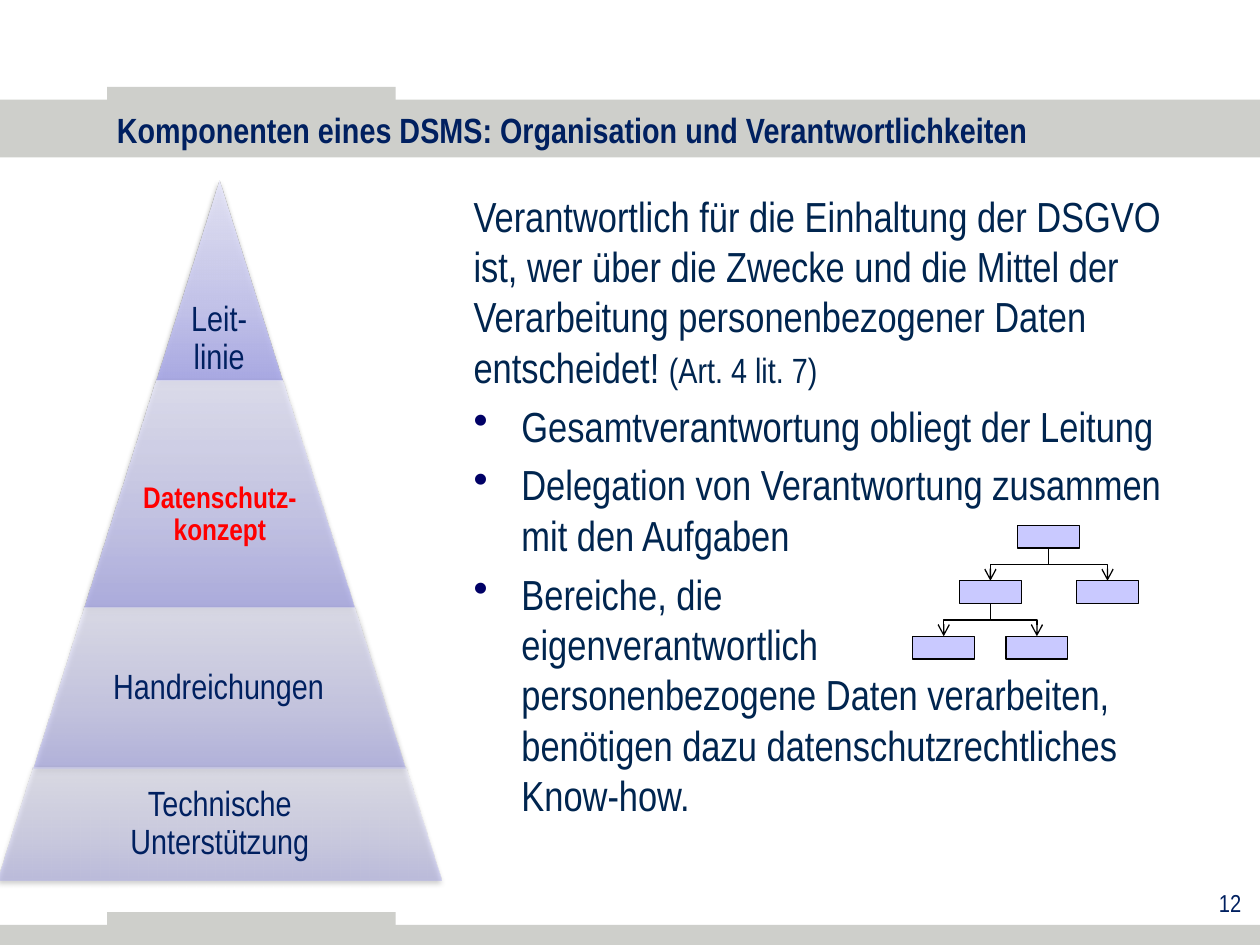
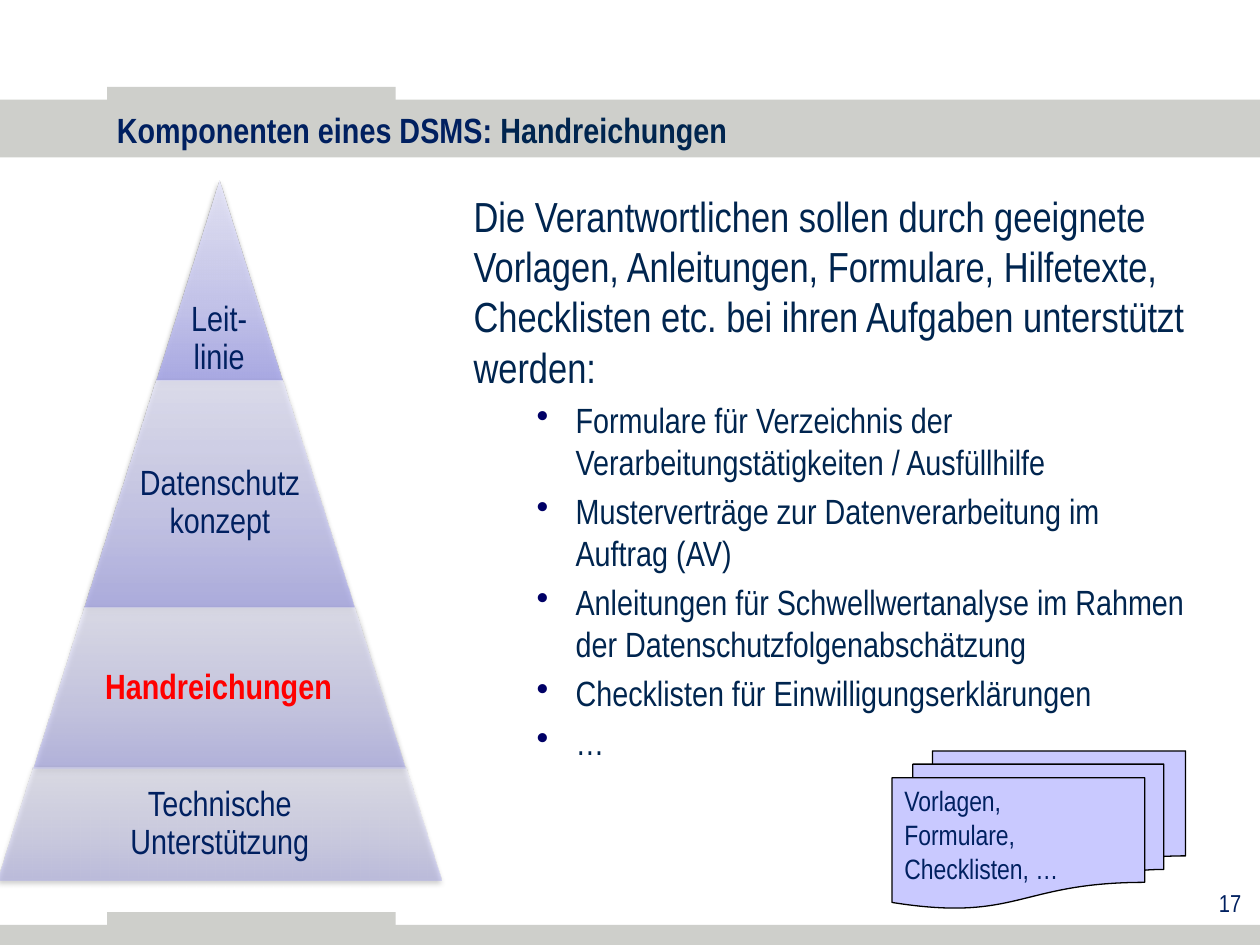
from pptx import Presentation
from pptx.dml.color import RGBColor
from pptx.enum.shapes import MSO_CONNECTOR, MSO_SHAPE
from pptx.enum.text import MSO_ANCHOR, PP_ALIGN
from pptx.oxml import parse_xml
from pptx.oxml.ns import nsdecls, qn
from pptx.util import Inches, Pt

RECT, TRAP = MSO_SHAPE.RECTANGLE, MSO_SHAPE.TRAPEZOID
DOCS = MSO_SHAPE.FLOWCHART_MULTIDOCUMENT
ELBOW = MSO_CONNECTOR.ELBOW
TOP, MID, LOW = MSO_ANCHOR.TOP, MSO_ANCHOR.MIDDLE, MSO_ANCHOR.BOTTOM
LEFT, CENTER, RIGHT = PP_ALIGN.LEFT, PP_ALIGN.CENTER, PP_ALIGN.RIGHT

NAVY = RGBColor(0x00, 0x20, 0x60)
INK = RGBColor(0x00, 0x25, 0x4F)
RED = RGBColor(0xFF, 0x00, 0x00)
GREY = RGBColor(0xCE, 0xCF, 0xCB)
LILAC = RGBColor(0xA5, 0xA5, 0xFF)
BLACK = RGBColor(0x00, 0x00, 0x00)
DOT = RGBColor(0x00, 0x00, 0x66)
SHADES = [(0, "A9A9E9"), (35, "C4C4EF"), (100, "E8E8FA")]
FONT = "Arial Narrow"
NS = nsdecls("a")

BANDS = [(0, 0.79, 10, 0.46), (0, 7.34, 10, 0.17),
         (0.85, 0.69, 2.29, 0.13), (0.85, 7.24, 2.29, 0.13)]

# Pyramid levels: box, adjustment, opacity, text left, text width
LEVELS = [
    ((1.24, 1.43, 1.0, 1.59), 0.5, 90, 1.24, 1.0),
    ((0.67, 3.02, 2.14, 1.8), 0.316, 77, 1.05, 1.39),
    ((0.27, 4.82, 2.95, 1.28), 0.316, 63, 0.78, 1.91),
    ((-0.02, 6.09, 3.52, 0.9), 0.316, 50, 0.6, 2.29),
]

# Body lines: text, size, indent level, small addition
# Labels: text, size, marked, top inset
PAGES = [
    dict(
        number="12",
        title=[("Komponenten eines DSMS: Organisation und Verantwortlichkeiten", NAVY)],
        body=[
            ("Verantwortlich für die Einhaltung der DSGVO ist, wer über die Zwecke "
             "und die Mittel der Verarbeitung personenbezogener Daten entscheidet! ",
             24, 0, "(Art. 4 lit. 7)"),
            ("Gesamtverantwortung obliegt der Leitung", 24, 1, ""),
            ("Delegation von Verantwortung zusammen mit den Aufgaben", 24, 1, ""),
            ("Bereiche, die\neigenverantwortlich\npersonenbezogene Daten verarbeiten, "
             "benötigen dazu datenschutzrechtliches Know-how.", 24, 1, ""),
        ],
        labels=[("Leit-\nlinie", 20, False, 0.03),
                ("Datenschutz-konzept", 17, True, 0.36),
                ("Handreichungen", 20, False, 0.03),
                ("Technische Unterstützung", 20, False, 0.03)],
    ),
    dict(
        number="17",
        title=[("Komponenten eines DSMS: ", NAVY), ("Handreichungen", INK)],
        body=[
            ("Die Verantwortlichen sollen durch geeignete Vorlagen, Anleitungen, "
             "Formulare, Hilfetexte, Checklisten etc. bei ihren Aufgaben "
             "unterstützt werden:", 24, 0, ""),
            ("Formulare für Verzeichnis der Verarbeitungstätigkeiten / Ausfüllhilfe",
             20, 2, ""),
            ("Musterverträge zur Datenverarbeitung im Auftrag (AV)", 20, 2, ""),
            ("Anleitungen für Schwellwertanalyse im Rahmen der "
             "Datenschutzfolgenabschätzung", 20, 2, ""),
            ("Checklisten für Einwilligungserklärungen", 20, 2, ""),
            ("…", 20, 2, ""),
        ],
        labels=[("Leit-\nlinie", 20, False, 0.03),
                ("Datenschutzkonzept", 20, False, 0.18),
                ("Handreichungen", 20, True, 0.03),
                ("Technische Unterstützung", 20, False, 0.03)],
    ),
]
INDENTS = {1: (0.38, -0.38), 2: (0.81, -0.31)}


def add_frame(page, box, anchor=TOP):
    frame = page.shapes.add_textbox(*map(Inches, box)).text_frame
    frame.word_wrap = True
    frame.vertical_anchor = anchor
    return frame


def style(par, size, color, bold=False, align=LEFT):
    par.alignment = align
    par.font.name = FONT
    par.font.size = Pt(size)
    par.font.bold = bold
    par.font.color.rgb = color


deck = Presentation()
deck.slide_width, deck.slide_height = Inches(10), Inches(7.5)
pages = []

for data in PAGES:
    page = deck.slides.add_slide(deck.slide_layouts[6])
    pages.append(page)

    # Grey bands
    for box in BANDS:
        band = page.shapes.add_shape(RECT, *map(Inches, box))
        band.shadow.inherit = False
        band.fill.solid()
        band.fill.fore_color.rgb = GREY
        band.line.fill.background()

    # Title and page number
    par = add_frame(page, (0.83, 0.82, 9.03, 0.42), MID).paragraphs[0]
    style(par, 20, NAVY, True)
    for text, color in data["title"]:
        run = par.add_run()
        run.text = text
        if color != NAVY:
            run.font.color.rgb = color
    par = add_frame(page, (7.73, 7, 2.22, 0.43)).paragraphs[0]
    par.text = data["number"]
    style(par, 14, NAVY, align=RIGHT)

    # Body text
    frame = add_frame(page, (3.66, 1.46, 5.92, 5.69))
    for i, (text, size, level, extra) in enumerate(data["body"]):
        par = frame.add_paragraph() if i else frame.paragraphs[0]
        par.text = text
        if level:
            left, hang = INDENTS[level]
            props = par._p.get_or_add_pPr()
            props.set("marL", str(Inches(left)))
            props.set("indent", str(Inches(hang)))
            props.append(parse_xml(
                f'<a:buClr {NS}><a:srgbClr val="{DOT}"/></a:buClr>'))
            props.append(parse_xml(f'<a:buChar {NS} char="•"/>'))
        if i:
            par.space_before = Pt(size * 0.2)
        style(par, size, INK)
        if extra:
            run = par.add_run()
            run.text = extra
            run.font.size = Pt(20)

    # Pyramid
    for i, (box, adjust, alpha, left, width) in enumerate(LEVELS):
        step = page.shapes.add_shape(TRAP, *map(Inches, box))
        step.adjustments[0] = adjust
        step.line.fill.background()
        stops = "".join(
            f'<a:gs pos="{pos * 1000}"><a:srgbClr val="{color}">'
            f'<a:alpha val="{alpha * 1000}"/></a:srgbClr></a:gs>'
            for pos, color in SHADES)
        props = step._element.spPr
        props.find(qn("a:ln")).addprevious(parse_xml(
            f'<a:gradFill {NS} rotWithShape="1"><a:gsLst>{stops}</a:gsLst>'
            '<a:lin ang="16200000" scaled="0"/></a:gradFill>'))
        props.append(parse_xml(
            f'<a:effectLst {NS}><a:outerShdw blurRad="40000" dist="20000" '
            'dir="5400000" rotWithShape="0"><a:srgbClr val="000000">'
            '<a:alpha val="38000"/></a:srgbClr></a:outerShdw></a:effectLst>'))

        text, size, marked, inset = data["labels"][i]
        frame = add_frame(page, (left, box[1], width, box[3]), MID if i else LOW)
        frame.margin_left = frame.margin_right = Inches(0.01)
        frame.margin_top, frame.margin_bottom = Inches(inset), Inches(0.03)
        par = frame.paragraphs[0]
        par.text = text
        par.line_spacing = 0.9
        style(par, size, RED if marked else NAVY, marked, CENTER)

first, second = pages
tinted = []

# Organisation chart: centre and top of each box, links by index
WIDE, HIGH = 0.49, 0.18
NODES = [(8.32, 4.17), (7.86, 4.61), (8.79, 4.61), (7.49, 5.05), (8.23, 5.05)]
LINKS = [(0, 1), (0, 2), (1, 3), (1, 4)]
for mid, top in NODES:
    tinted.append(first.shapes.add_shape(
        RECT, *map(Inches, (mid - WIDE / 2, top, WIDE, HIGH))))
for start, end in LINKS:
    x1, y1 = NODES[start]
    x2, y2 = NODES[end]
    y1 += HIGH
    # The elbow lies sideways around its centre, then gets turned upright
    run, drop = abs(x2 - x1), y2 - y1
    near, far = (x1 + x2 - drop) / 2, (x1 + x2 + drop) / 2
    top, base = (y1 + y2 - run) / 2, (y1 + y2 + run) / 2
    turn = 90
    if x2 > x1:
        near, far, turn = far, near, 270
    link = first.shapes.add_connector(ELBOW, *map(Inches, (near, top, far, base)))
    link.line.color.rgb = BLACK
    link.line.width = Pt(0.75)
    props = link._element.spPr
    props.find(qn("a:xfrm")).set("rot", str(turn * 60000))
    props.find(qn("a:ln")).append(parse_xml(f'<a:tailEnd {NS} type="arrow"/>'))
    props.append(parse_xml(f"<a:effectLst {NS}/>"))

# Stack of documents
stack = second.shapes.add_shape(DOCS, *map(Inches, (7.08, 5.96, 2.33, 1.25)))
tinted.append(stack)
frame = stack.text_frame
frame.word_wrap = True
frame.vertical_anchor = TOP
par = frame.paragraphs[0]
par.text = "Vorlagen,\nFormulare, Checklisten, …"
style(par, 16, NAVY)

# Translucent lilac fill with a thin black line
for shape in tinted:
    shape.shadow.inherit = False
    shape.fill.solid()
    shape.fill.fore_color.rgb = LILAC
    shape.line.color.rgb = BLACK
    shape.line.width = Pt(0.75)
    tint = shape._element.spPr.find(qn("a:solidFill")).find(qn("a:srgbClr"))
    tint.append(parse_xml(f'<a:alpha {NS} val="60000"/>'))

deck.save("out.pptx")
